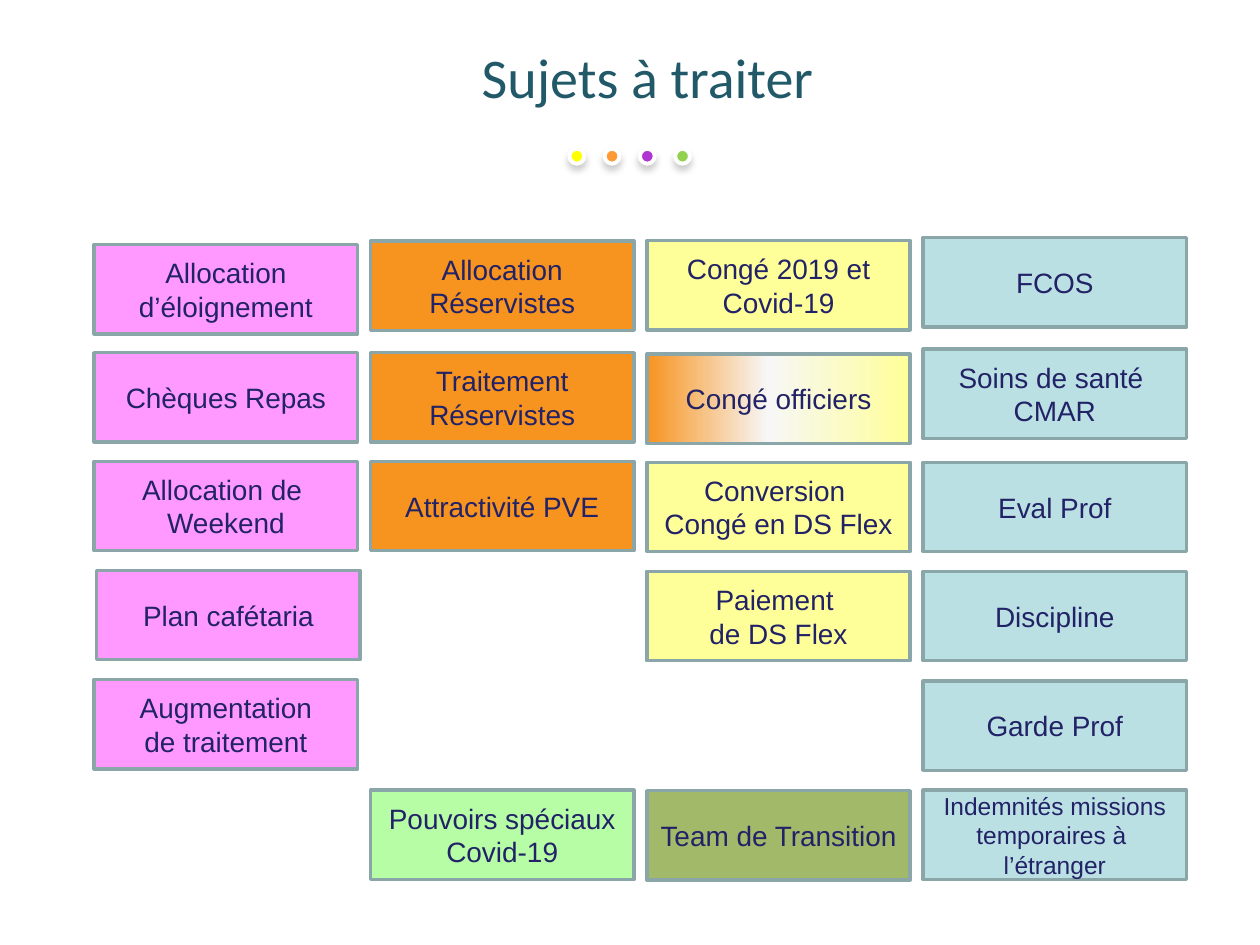
import copy

import lxml.etree
import pptx
import pptx.dml.color
import pptx.enum.shapes
import pptx.enum.text
import pptx.oxml
import pptx.oxml.ns
import pptx.util

Cm = pptx.util.Cm
Pt = pptx.util.Pt
RGBColor = pptx.dml.color.RGBColor
SHAPE = pptx.enum.shapes.MSO_SHAPE
qn = pptx.oxml.ns.qn

TEAL = RGBColor(0x21, 0x59, 0x68)
NAVY = RGBColor(0x22, 0x22, 0x67)
GREY_BLUE = RGBColor(0x8A, 0xA6, 0xA8)
WHITE = RGBColor(0xFF, 0xFF, 0xFF)
OFF_WHITE = RGBColor(0xF7, 0xF7, 0xF7)
PINK = RGBColor(0xFF, 0x99, 0xFF)
ORANGE = RGBColor(0xF7, 0x93, 0x1F)
PALE_YELLOW = RGBColor(0xFF, 0xFF, 0x99)
PALE_BLUE = RGBColor(0xBB, 0xE0, 0xE3)
MINT = RGBColor(0xB6, 0xFD, 0xA5)
OLIVE = RGBColor(0xA2, 0xB9, 0x69)
DOT_COLOURS = [
    RGBColor(0xFF, 0xFF, 0x00),
    RGBColor(0xFF, 0x99, 0x33),
    RGBColor(0xB0, 0x34, 0xD2),
    RGBColor(0x92, 0xD0, 0x50),
]


def write_text(shape, text, *, font="Arial", size=16, colour=NAVY):
    frame = shape.text_frame
    frame.word_wrap = True
    frame.vertical_anchor = pptx.enum.text.MSO_ANCHOR.MIDDLE
    frame.text = text
    for paragraph in frame.paragraphs:
        paragraph.alignment = pptx.enum.text.PP_ALIGN.CENTER
        for run in paragraph.runs:
            run.font.name = font
            run.font.size = Pt(size)
            run.font.color.rgb = colour


presentation = pptx.Presentation()
presentation.slide_width = Cm(25.4)
presentation.slide_height = Cm(19.05)
slide = presentation.slides.add_slide(presentation.slide_layouts[6])

# Title
title = slide.shapes.add_textbox(Cm(5.46), Cm(0.41), Cm(15.19), Cm(2.24))
write_text(title, "Sujets à traiter", font="Calibri", size=32, colour=TEAL)

# Topics by column: top in cm, fill, text
columns = [
    [
        (4.93, PINK, "Allocation\nd’éloignement"),
        (7.11, PINK, "Chèques Repas"),
        (9.3, PINK, "Allocation de \nWeekend"),
        (11.5, PINK, "Plan cafétaria"),
        (13.7, PINK, "Augmentation\nde traitement"),
    ],
    [
        (4.86, ORANGE, "Allocation\nRéservistes"),
        (7.11, ORANGE, "Traitement Réservistes"),
        (9.3, ORANGE, "Attractivité PVE"),
        (15.93, MINT, "Pouvoirs spéciaux Covid-19"),
    ],
    [
        (4.85, PALE_YELLOW, "Congé 2019 et Covid-19"),
        (7.14, None, "Congé officiers"),
        (9.32, PALE_YELLOW, "Conversion \nCongé en DS Flex"),
        (11.52, PALE_YELLOW, "Paiement \nde DS Flex"),
        (15.94, OLIVE, "Team de Transition"),
    ],
    [
        (4.79, PALE_BLUE, "FCOS"),
        (7.04, PALE_BLUE, "Soins de santé \nCMAR"),
        (9.32, PALE_BLUE, "Eval Prof"),
        (11.52, PALE_BLUE, "Discipline"),
        (13.73, PALE_BLUE, "Garde Prof"),
        (15.93, PALE_BLUE, "Indemnités missions temporaires à \vl’étranger"),
    ],
]
for index, topics in enumerate(columns):
    for top, colour, text in topics:
        nudge = 0.05 if text == "Plan cafétaria" else 0
        left = 1.9 + 5.57 * index + nudge
        topic = slide.shapes.add_shape(
            SHAPE.RECTANGLE, Cm(left), Cm(top), Cm(5.31), Cm(1.8))
        topic.shadow.inherit = False
        topic.line.color.rgb = GREY_BLUE
        topic.line.width = Pt(2)
        if colour is not None:
            topic.fill.solid()
            topic.fill.fore_color.rgb = colour
        else:
            # Blend between the yellow and the orange topics
            topic.fill.gradient()
            topic.fill.gradient_angle = 180
            first_stop = topic.fill.gradient_stops[0]
            gradient = topic.element.spPr.find(qn("a:gradFill"))
            stop_list = gradient.find(qn("a:gsLst"))
            stop_list.insert(1, copy.deepcopy(stop_list[0]))
            blend = [(0, PALE_YELLOW), (0.54, OFF_WHITE), (1, ORANGE)]
            for stop, (position, shade) in zip(topic.fill.gradient_stops, blend):
                stop.position = position
                stop.color.rgb = shade
        write_text(topic, text, size=14 if text.startswith("Indemnités") else 16)

# Row of dots under the title, with a soft shadow below each
dots = slide.shapes.add_group_shape()
for index, colour in enumerate(DOT_COLOURS):
    dot = dots.shapes.add_shape(
        SHAPE.OVAL, Cm(11.48 + 0.71 * index), Cm(3), Cm(0.3), Cm(0.3))
    dot.fill.solid()
    dot.fill.fore_color.rgb = colour
    dot.line.color.rgb = WHITE
    dot.line.width = Pt(2.25)
    dot.shadow.inherit = False
    effects = dot.element.spPr.find(qn("a:effectLst"))
    shadow = lxml.etree.SubElement(
        effects, qn("a:outerShdw"), blurRad=str(Pt(4)), dist=str(Pt(3)),
        dir="5400000", algn="t", rotWithShape="0")
    black = lxml.etree.SubElement(shadow, qn("a:srgbClr"), val="000000")
    lxml.etree.SubElement(black, qn("a:alpha"), val="20000")

presentation.save("out.pptx")
